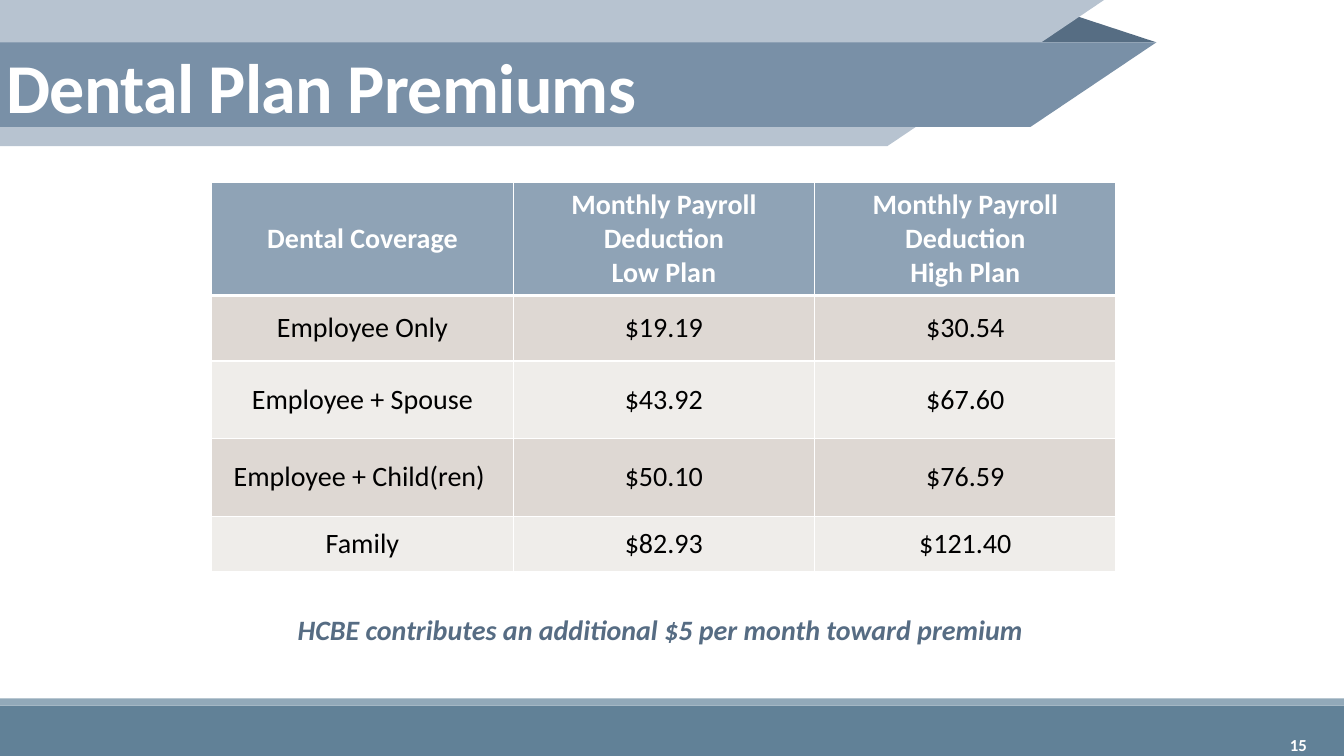
from lxml import etree
from pptx import Presentation
from pptx.dml.color import RGBColor
from pptx.enum.shapes import MSO_SHAPE as SHAPE
from pptx.enum.text import MSO_ANCHOR as ANCHOR, MSO_AUTO_SIZE as FIT, PP_ALIGN as ALIGN
from pptx.oxml import parse_xml
from pptx.oxml.ns import nsdecls
from pptx.util import Inches, Pt


def paint(fill, color):
    fill.solid()
    fill.fore_color.rgb = RGBColor.from_string(color)


def write(frame, text, size=20, color="FFFFFF", bold=True, italic=False,
          align=ALIGN.CENTER):
    frame.word_wrap = True
    for i, line in enumerate(text.split("\n")):
        para = frame.paragraphs[0] if i == 0 else frame.add_paragraph()
        para.alignment = align
        span = para.add_run()
        span.text = line
        span.font.name = "Calibri"
        span.font.size = Pt(size)
        span.font.bold = bold
        span.font.italic = italic
        paint(span.font.fill, color)


deck = Presentation()
deck.slide_width, deck.slide_height = Inches(13.33), Inches(7.5)
page = deck.slides.add_slide(deck.slide_layouts[5])

# Footer bars and the folded corner of the ribbon
for kind, left, top, width, height, color in [
    (SHAPE.RECTANGLE, 0, 7, 13.33, 0.5, "618197"),
    (SHAPE.RECTANGLE, 0, 6.93, 13.33, 0.07, "92A9B9"),
    (SHAPE.ISOSCELES_TRIANGLE, 10.21, 0.14, 1.26, 0.28, "566D83"),
]:
    bar = page.shapes.add_shape(kind, Inches(left), Inches(top), Inches(width), Inches(height))
    bar.shadow.inherit = False
    bar.line.fill.background()
    paint(bar.fill, color)
fold = bar
fold.adjustments[0] = 0.324

# Slanted ribbon bands: top, bottom, right end at the top, right end at the bottom
for top, bottom, top_end, bottom_end, color in [
    (0, 1.45, 10.95, 8.8, "B7C3D0"),
    (0.42, 1.26, 11.47, 10.22, "7990A7"),
]:
    outline = page.shapes.build_freeform(0, Inches(top))
    outline.add_line_segments([(Inches(x), Inches(y)) for x, y in [
        (top_end, top), (bottom_end, bottom), (0, bottom)]])
    band = outline.convert_to_shape()
    band.shadow.inherit = False
    band.line.fill.background()
    paint(band.fill, color)

# Premium table
rows = [
    ("Dental Coverage", "Monthly Payroll Deduction\nLow Plan",
     "Monthly Payroll Deduction\nHigh Plan"),
    ("Employee Only", "$19.19", "$30.54"),
    ("Employee + Spouse", "$43.92", "$67.60"),
    ("Employee + Child(ren) ", "$50.10", "$76.59"),
    ("Family", "$82.93", "$121.40"),
]
heights = [1.1, 0.65, 0.77, 0.77, 0.55]
table = page.shapes.add_table(len(rows), 3, Inches(2.1), Inches(1.81),
                              Inches(8.97), Inches(sum(heights))).table
for column in table.columns:
    column.width = Inches(2.99)
for r, (texts, height) in enumerate(zip(rows, heights)):
    table.rows[r].height = Inches(height)
    header = r == 0
    for c, text in enumerate(texts):
        cell = table.cell(r, c)
        cell.vertical_anchor = ANCHOR.MIDDLE
        write(cell.text_frame, text, color="FFFFFF" if header else "000000", bold=header)
        # White borders, thick between the header and the body
        for side in ("lnL", "lnR", "lnT", "lnB"):
            thick = (r, side) in [(0, "lnB"), (1, "lnT")]
            border = parse_xml(f'<a:{side} {nsdecls("a")} w="{Pt(3 if thick else 1)}"/>')
            color_fill = etree.SubElement(border, border.tag.replace(side, "solidFill"))
            etree.SubElement(color_fill, border.tag.replace(side, "srgbClr"), val="FFFFFF")
            cell._tc.get_or_add_tcPr().append(border)
        paint(cell.fill, "8FA3B6" if header else "DED8D3" if r % 2 else "EFEDEA")

# Note under the table
note = page.shapes.add_textbox(Inches(2.1), Inches(6.03), Inches(8.9), Inches(0.44))
write(note.text_frame, "HCBE contributes an additional $5 per month toward premium",
      color="566C83", italic=True)

# Title, brought in front of the ribbon
title = page.shapes.title
title.left, title.top = Inches(0.01), Inches(0.49)
title.width, title.height = Inches(12.21), Inches(1.07)
frame = title.text_frame
frame.auto_size = FIT.NONE
frame.vertical_anchor = ANCHOR.TOP
frame.margin_left, frame.margin_top = Inches(0.05), Inches(0.07)
write(frame, "Dental Plan Premiums", size=50, align=ALIGN.LEFT)
frame.paragraphs[0].line_spacing = 0.85
frame.paragraphs[0].runs[0].font._element.set("spc", "-50")
title._element.getparent().append(title._element)

# Page number
number = page.shapes.add_textbox(Inches(11.63), Inches(7.19), Inches(1.43), Inches(0.4))
number.text_frame.vertical_anchor = ANCHOR.MIDDLE
write(number.text_frame, "15", size=12, align=ALIGN.RIGHT)

deck.save("out.pptx")
